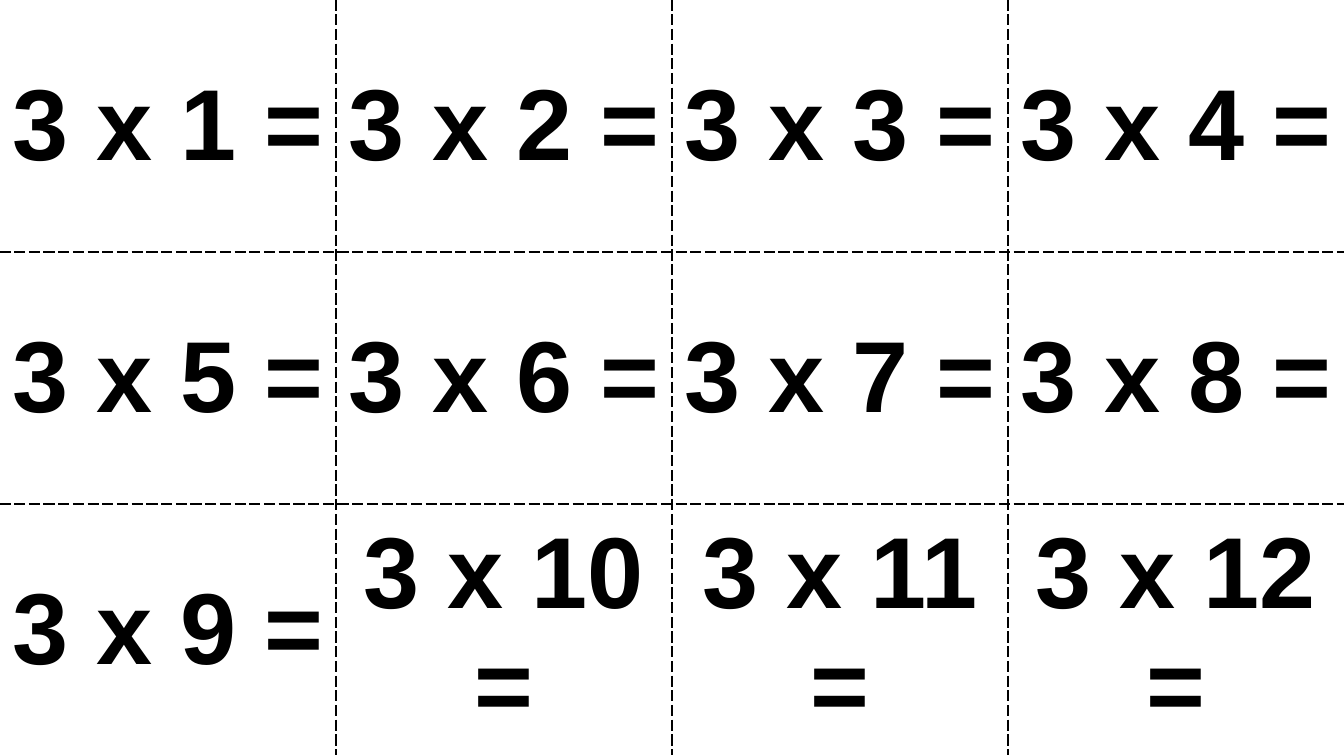
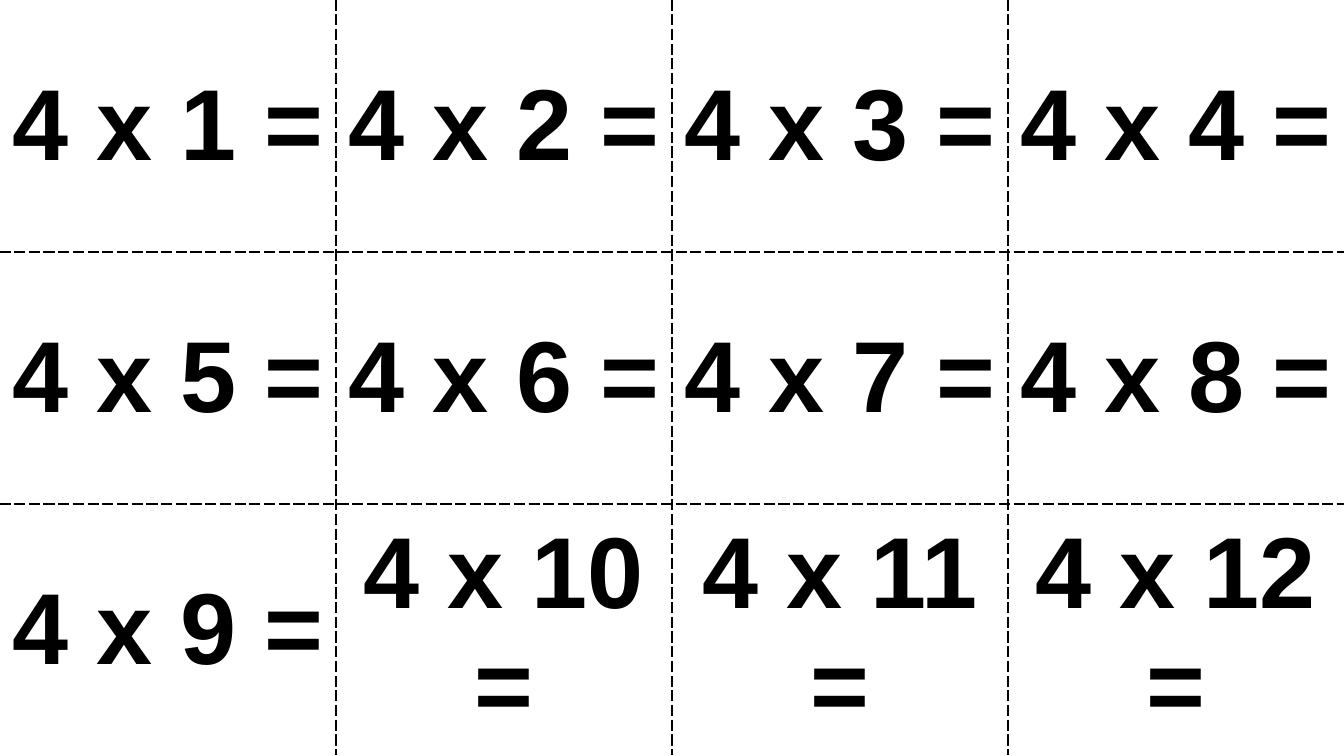
from dataclasses import dataclass

from lxml.etree import SubElement
from pptx import Presentation
from pptx.dml.color import RGBColor
from pptx.enum.text import MSO_ANCHOR, PP_ALIGN
from pptx.oxml.ns import qn
from pptx.util import Cm, Pt


@dataclass(frozen=True)
class Theme:
    """Colours, type and line sizes shared by all slides."""
    ink: str = "000000"
    paper: str = "FFFFFF"
    font: str = "Arial"
    size: int = 72
    line: int = 1


THEME = Theme()
WIDTH, HEIGHT = Cm(33.87), Cm(19.05)
ROWS, COLS = 3, 4
TABLES = (3, 4)


def add_border(cell, side, outer):
    """Draw a plain paper-coloured outer edge or a dashed cutting line."""
    ln = SubElement(cell._tc.get_or_add_tcPr(), qn(f"a:ln{side}"), w=str(Pt(THEME.line)))
    fill = SubElement(ln, qn("a:solidFill"))
    SubElement(fill, qn("a:srgbClr"), val=THEME.paper if outer else THEME.ink)
    SubElement(ln, qn("a:prstDash"), val="solid" if outer else "dash")


def format_card(cell, row, col):
    """Set the borders and the fill of one card."""
    edges = {"L": col == 0, "R": col == COLS - 1, "T": row == 0, "B": row == ROWS - 1}
    for side, outer in edges.items():
        add_border(cell, side, outer)
    cell.fill.solid()
    cell.fill.fore_color.rgb = RGBColor.from_string(THEME.paper)
    cell.vertical_anchor = MSO_ANCHOR.MIDDLE


def write_card(cell, text):
    """Write one centred multiplication on a card."""
    cell.text_frame.text = text
    p = cell.text_frame.paragraphs[0]
    p.alignment = PP_ALIGN.CENTER
    font = p.runs[0].font
    font.name, font.size, font.bold = THEME.font, Pt(THEME.size), True
    font.color.rgb = RGBColor.from_string(THEME.ink)


def add_cards(s, number):
    """Fill a slide with the cards of one times table."""
    table = s.shapes.add_table(ROWS, COLS, 0, 0, WIDTH, HEIGHT).table
    table.first_row = table.horz_banding = False
    for i, cell in enumerate(table.iter_cells()):
        format_card(cell, *divmod(i, COLS))
        write_card(cell, f"{number} x {i + 1} =")


def main():
    """Build and save the flash cards."""
    prs = Presentation()
    prs.slide_width, prs.slide_height = WIDTH, HEIGHT
    for number in TABLES:
        add_cards(prs.slides.add_slide(prs.slide_layouts[6]), number)
    prs.save("out.pptx")


if __name__ == "__main__":
    main()
